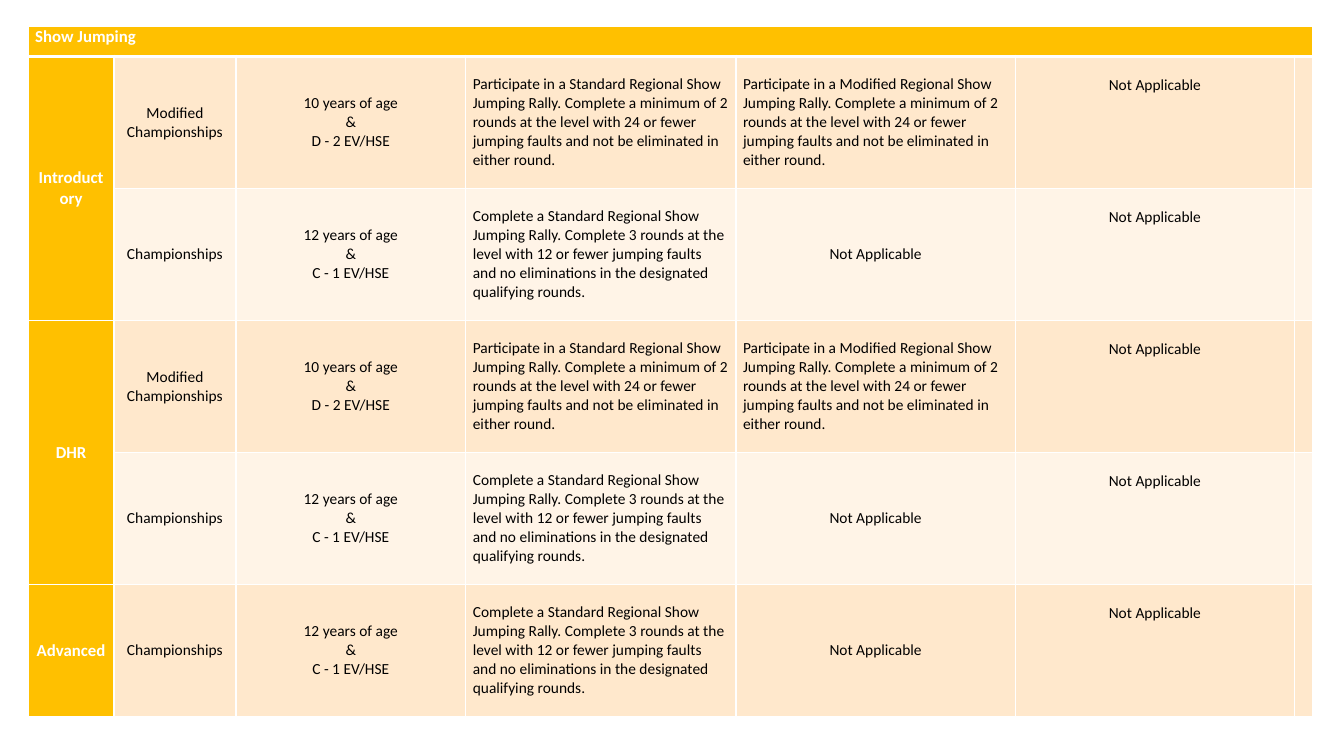
from dataclasses import dataclass

from lxml.etree import SubElement
from pptx import Presentation
from pptx.dml.color import RGBColor
from pptx.enum.text import MSO_ANCHOR as Anchor, PP_ALIGN as Align
from pptx.oxml.ns import qn
from pptx.util import Inches, Pt

WHITE = RGBColor(0xFF, 0xFF, 0xFF)
BLACK = RGBColor(0x00, 0x00, 0x00)
GOLD = RGBColor(0xFF, 0xC0, 0x00)
PEACH = RGBColor(0xFF, 0xE8, 0xCC)
CREAM = RGBColor(0xFF, 0xF4, 0xE7)

COLUMN_WIDTHS = (0.85, 1.21, 2.28, 2.68, 2.77, 2.77, 0.1)
HEADER_HEIGHT, ROW_HEIGHT = 0.3, 1.31
LINE_HEIGHT = 0.19
NOT_APPLICABLE = "Not Applicable"


@dataclass(frozen=True)
class CellStyle:
    size: int = 11
    color: RGBColor = BLACK
    bold: bool = False
    align: Align = Align.CENTER
    anchor: Anchor = Anchor.MIDDLE
    top: float = 0


@dataclass(frozen=True)
class Event:
    name: str
    eligibility: str
    standard: str
    modified: str


HEADER = CellStyle(12, WHITE, True, Align.LEFT, Anchor.TOP)
LEVEL = CellStyle(12, WHITE, True)
CENTERED = CellStyle()
RULE = CellStyle(align=Align.LEFT)
LOWERED = CellStyle(anchor=Anchor.TOP, top=LINE_HEIGHT)

RALLY = (
    "Participate in a {} Regional Show Jumping Rally. Complete a minimum of 2 rounds "
    "at the level with 24 or fewer jumping faults and not be eliminated in either round."
)
MODIFIED = Event(
    "Modified Championships",
    "10 years of age\n&\nD - 2 EV/HSE",
    RALLY.format("Standard"),
    RALLY.format("Modified"),
)
CHAMPIONSHIPS = Event(
    "Championships",
    "12 years of age\n&\nC - 1 EV/HSE",
    "Complete a Standard Regional Show Jumping Rally. Complete 3 rounds at the level "
    "with 12 or fewer jumping faults and no eliminations in the designated "
    "qualifying rounds.",
    NOT_APPLICABLE,
)
LEVELS = {
    "Introductory": (MODIFIED, CHAMPIONSHIPS),
    "DHR": (MODIFIED, CHAMPIONSHIPS),
    "Advanced": (CHAMPIONSHIPS,),
}


def set_borders(cell, top: float = 1, bottom: float = 1) -> None:
    """Draw white borders; widths are in points."""
    properties = cell._tc.get_or_add_tcPr()
    sides = {"lnL": 1, "lnR": 1, "lnT": top, "lnB": bottom}
    for index, (side, width) in enumerate(sides.items()):
        line = SubElement(properties, qn(f"a:{side}"), w=str(Pt(width)))
        fill = SubElement(line, qn("a:solidFill"))
        SubElement(fill, qn("a:srgbClr"), val=str(WHITE))
        properties.insert(index, line)


def fill_cell(cell, color: RGBColor) -> None:
    cell.fill.solid()
    cell.fill.fore_color.rgb = color


def write_cell(cell, text: str, style: CellStyle) -> None:
    cell.text = text
    cell.vertical_anchor = style.anchor
    cell.margin_left = cell.margin_right = Inches(0.07)
    cell.margin_top, cell.margin_bottom = Inches(style.top), 0
    for paragraph in cell.text_frame.paragraphs:
        paragraph.alignment = style.align
        font = paragraph.font
        font.name, font.size, font.bold = "Calibri", Pt(style.size), style.bold
        font.color.rgb = style.color


def write_event(table, row: int, event: Event) -> None:
    entries = (
        (event.name, CENTERED),
        (event.eligibility, CENTERED),
        (event.standard, RULE),
        (event.modified, CENTERED if event.modified == NOT_APPLICABLE else RULE),
        (NOT_APPLICABLE, LOWERED),
    )
    for column, (text, style) in enumerate(entries, start=1):
        write_cell(table.cell(row, column), text, style)


def add_qualification_table(page) -> None:
    row_count = 1 + sum(len(events) for events in LEVELS.values())
    last_column = len(COLUMN_WIDTHS) - 1
    table = page.shapes.add_table(
        row_count, len(COLUMN_WIDTHS), Inches(0.28), Inches(0.26),
        Inches(sum(COLUMN_WIDTHS)),
        Inches(HEADER_HEIGHT + (row_count - 1) * ROW_HEIGHT),
    ).table
    table.first_row = table.horz_banding = False
    for column, width in zip(table.columns, COLUMN_WIDTHS):
        column.width = Inches(width)

    for index, row in enumerate(table.rows):
        row.height = Inches(ROW_HEIGHT if index else HEADER_HEIGHT)
        band = PEACH if index % 2 else CREAM
        for column, cell in enumerate(row.cells):
            set_borders(cell, top=3 if index == 1 else 1, bottom=1 if index else 3)
            fill_cell(cell, GOLD if index == 0 or column == 0 else band)

    table.cell(0, 0).merge(table.cell(0, last_column))
    write_cell(table.cell(0, 0), "Show Jumping", HEADER)

    first = 1
    for level, events in LEVELS.items():
        last = first + len(events) - 1
        if last > first:
            table.cell(first, 0).merge(table.cell(last, 0))
        write_cell(table.cell(first, 0), level, LEVEL)
        for row, event in enumerate(events, start=first):
            write_event(table, row, event)
        # The narrow last column stays empty.
        for row in range(first, last + 1):
            write_cell(table.cell(row, last_column), "", CENTERED)
        first = last + 1


def main() -> None:
    deck = Presentation()
    deck.slide_width, deck.slide_height = Inches(13.33), Inches(7.5)
    page = deck.slides.add_slide(deck.slide_layouts.get_by_name("Blank"))
    add_qualification_table(page)
    deck.save("out.pptx")


if __name__ == "__main__":
    main()
